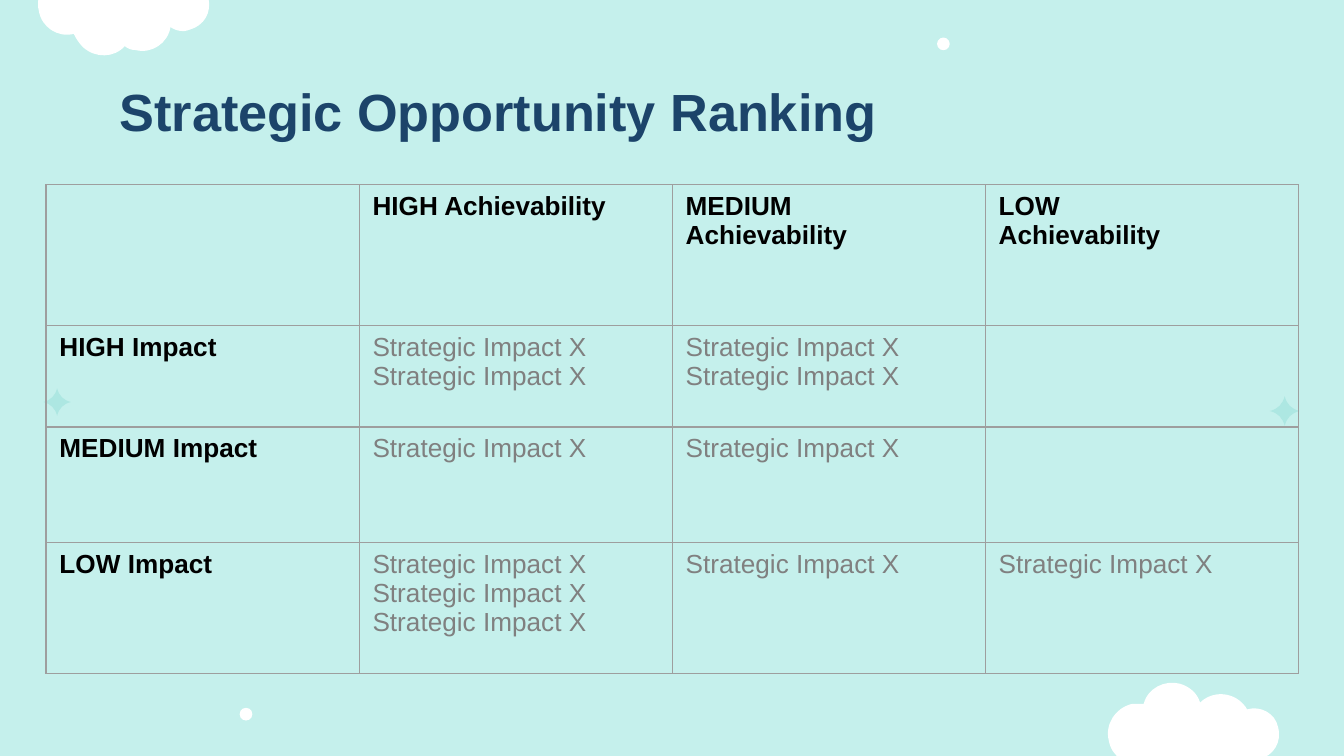
from lxml.etree import SubElement
from pptx import Presentation
from pptx.dml.color import RGBColor
from pptx.enum.shapes import MSO_SHAPE as Shape
from pptx.enum.text import MSO_ANCHOR as Anchor, PP_ALIGN as Align
from pptx.oxml.ns import qn
from pptx.util import Cm, Pt

COLORS = {
    "sky": "C5F0EC", "cloud": "FFFFFF", "star": "ADE7E2", "title": "1C446A",
    "heading": "000000", "entry": "808080", "border": "9E9E9E",
}
FONT = "Arial"
IMPACT = "Strategic Impact X"
ROWS = [
    ["", "HIGH Achievability", "MEDIUM\nAchievability", "LOW\nAchievability"],
    ["HIGH Impact", "\n".join([IMPACT] * 2), "\n".join([IMPACT] * 2), ""],
    ["MEDIUM Impact", IMPACT, IMPACT, ""],
    ["LOW Impact", "\n".join([IMPACT] * 3), IMPACT, IMPACT],
]
ROW_HEIGHTS = [2.67, 1.91, 2.19, 2.47]

CLOUD_GRID = (128, 76)
CLOUD_CURVES = [
    [(105, 58), (102, 57), (99, 55)], [(97, 67), (85, 75), (73, 72)],
    [(70, 72), (67, 71), (65, 69)], [(57, 78), (43, 78), (34, 70)],
    [(31, 67), (29, 64), (27, 60)], [(15, 63), (3, 55), (1, 43)],
    [(-2, 31), (6, 19), (18, 16)], [(21, 16), (24, 16), (27, 16)],
    [(30, 4), (43, -2), (54, 1)], [(61, 3), (67, 8), (69, 15)],
    [(78, 6), (93, 7), (101, 16)], [(102, 17), (103, 18), (104, 20)],
    [(114, 17), (125, 23), (127, 33)], [(130, 44), (124, 54), (113, 57)],
    [(112, 57), (111, 58), (109, 58)],
]
STAR_GRID = (22, 22)
STAR_CURVES = [[(12.5, 6), (16, 9.5), (22, 11)]]
for _ in range(3):
    STAR_CURVES.append([(22 - y, x) for x, y in STAR_CURVES[-1]])


def rgb(name):
    return RGBColor.from_string(COLORS[name])


def paint(shape, color):
    shape.shadow.inherit = False
    shape.fill.solid()
    shape.fill.fore_color.rgb = rgb(color)
    shape.line.fill.background()


def format_text(frame, size, color, bold):
    for para in frame.paragraphs:
        para.alignment = Align.LEFT
        for span in para.runs:
            span.font.name = FONT
            span.font.size = Pt(size)
            span.font.bold = bold
            span.font.color.rgb = rgb(color)


def bend_segments(shape):
    segments = list(shape._element.iter(qn("a:lnTo")))
    for index in range(0, len(segments), 3):
        first = segments[index]
        curve = first.makeelement(qn("a:cubicBezTo"), {})
        first.addprevious(curve)
        for segment in segments[index:index + 3]:
            curve.append(segment[0])
            segment.getparent().remove(segment)


def add_curved_shape(page, box, grid, curves, color):
    left, top, width, height = box
    controls = [curves[-1][-1]] + [point for curve in curves for point in curve]
    points = [(Cm(left + x * width / grid[0]), Cm(top + y * height / grid[1]))
              for x, y in controls]
    builder = page.shapes.build_freeform(*points[0])
    builder.add_line_segments(points[1:])
    shape = builder.convert_to_shape()
    bend_segments(shape)
    paint(shape, color)


def add_dot(page, left, top, size):
    dot = page.shapes.add_shape(Shape.OVAL, Cm(left), Cm(top), Cm(size), Cm(size))
    paint(dot, "cloud")


def add_decoration(page, width, height):
    for left, top in [(width - 4.47, height - 1.39), (0.71, -0.89)]:
        add_curved_shape(page, (left, top, 3.25, 1.94), CLOUD_GRID, CLOUD_CURVES, "cloud")
    for left, top, size in [(24, 7.49, 0.56), (0.82, 7.34, 0.52)]:
        add_curved_shape(page, (left, top, size, size), STAR_GRID, STAR_CURVES, "star")
    for left, top in [(4.53, 13.38), (17.71, 0.71)]:
        add_dot(page, left, top, 0.24)


def add_title(page, left, top, width, height):
    title = page.shapes.title
    title.left, title.top = Cm(left), Cm(top)
    title.width, title.height = Cm(width), Cm(height)
    frame = title.text_frame
    frame.text = "Strategic Opportunity Ranking"
    frame.word_wrap = True
    frame.vertical_anchor = Anchor.TOP
    frame.margin_left = frame.margin_right = Cm(0.25)
    frame.margin_top = frame.margin_bottom = Cm(0.25)
    format_text(frame, 28, "title", True)


def add_borders(cell):
    properties = cell._tc.get_or_add_tcPr()
    for index, side in enumerate(["a:lnL", "a:lnR", "a:lnT", "a:lnB"]):
        line = properties.makeelement(qn(side), {"w": str(Pt(0.75))})
        fill = SubElement(line, qn("a:solidFill"))
        SubElement(fill, qn("a:srgbClr"), val=COLORS["border"])
        properties.insert(index, line)


def add_ranking_table(page, left, top, width):
    row_count, column_count = len(ROWS), len(ROWS[0])
    table = page.shapes.add_table(
        row_count, column_count, Cm(left), Cm(top), Cm(width), Cm(sum(ROW_HEIGHTS))).table
    table.horz_banding = False
    for column in table.columns:
        column.width = Cm(width / column_count)
    for row_index, texts in enumerate(ROWS):
        table.rows[row_index].height = Cm(ROW_HEIGHTS[row_index])
        for column_index, text in enumerate(texts):
            cell = table.cell(row_index, column_index)
            cell.text_frame.text = text
            cell.fill.background()
            heading = row_index == 0 or column_index == 0
            format_text(cell.text_frame, 14, "heading" if heading else "entry", heading)
            add_borders(cell)


def main():
    width, height = 25.4, 14.29
    deck = Presentation()
    deck.slide_width, deck.slide_height = Cm(width), Cm(height)
    page = deck.slides.add_slide(deck.slide_layouts[5])
    page.background.fill.solid()
    page.background.fill.fore_color.rgb = rgb("sky")
    add_decoration(page, width, height)
    add_title(page, 2.01, 1.24, 21.41, 1.6)
    add_ranking_table(page, 0.87, 3.49, 23.67)
    deck.save("out.pptx")


if __name__ == "__main__":
    main()
